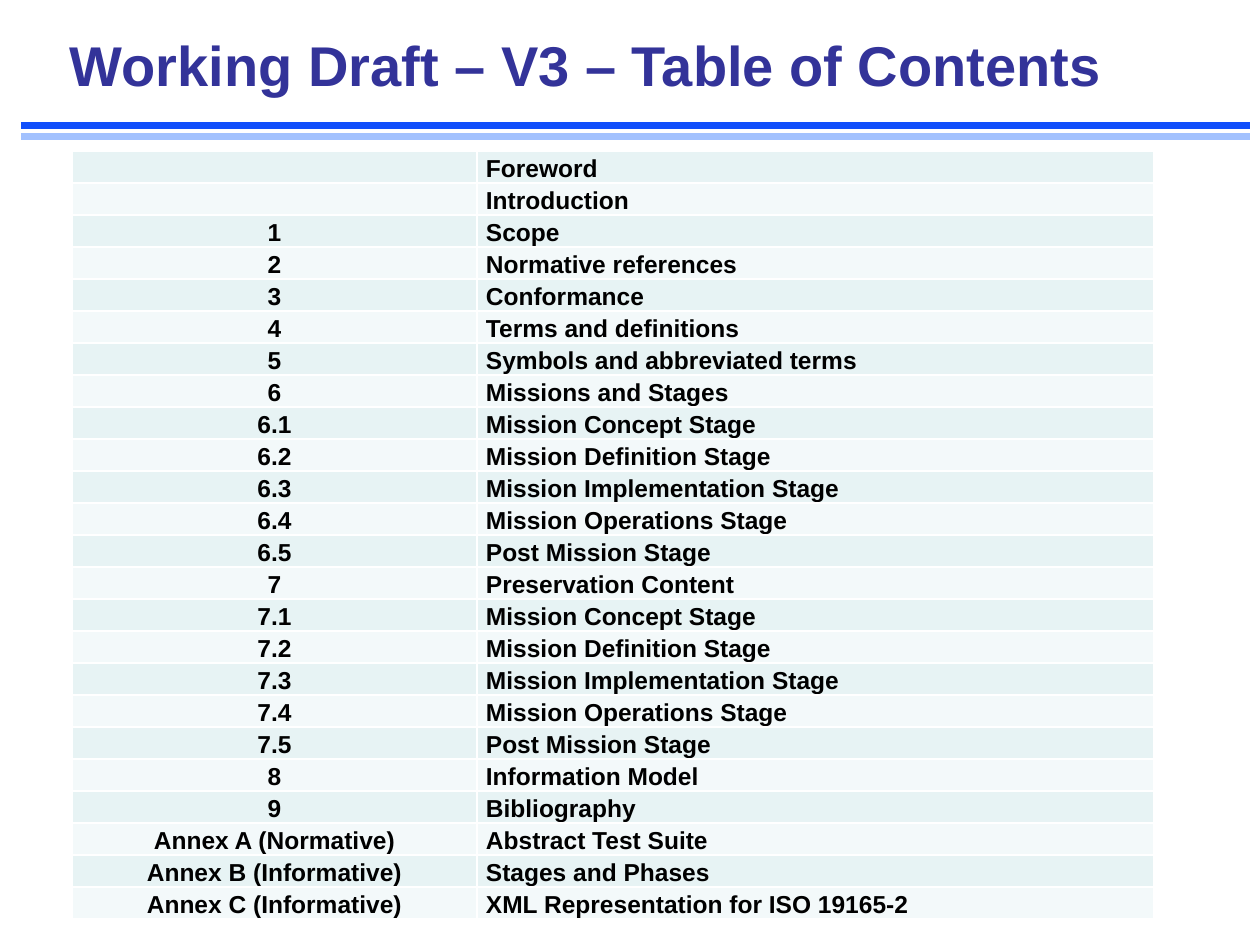
import dataclasses

import lxml.etree
import pptx
import pptx.dml.color
import pptx.enum.shapes
import pptx.enum.text
import pptx.oxml.ns
import pptx.util

EMU_PER_PX = 914400 // 126
ALIGN = pptx.enum.text.PP_ALIGN
MIDDLE = pptx.enum.text.MSO_ANCHOR.MIDDLE


@dataclasses.dataclass(frozen=True)
class Theme:
    font: str = "Arial"
    title_size: int = 32
    cell_size: int = 14
    rule_width: int = 4
    border_width: int = 1
    title: str = "333399"
    text: str = "000000"
    border: str = "FFFFFF"
    rules: tuple = ("114FFB", "A2C1FE")
    bands: tuple = ("E7F3F4", "F3F9FA")


THEME = Theme()

CONTENTS = [
    ("", "Foreword"),
    ("", "Introduction"),
    ("1", "Scope"),
    ("2", "Normative references"),
    ("3", "Conformance"),
    ("4", "Terms and definitions"),
    ("5", "Symbols and abbreviated terms"),
    ("6", "Missions and Stages"),
    ("6.1", "Mission Concept Stage"),
    ("6.2", "Mission Definition Stage"),
    ("6.3", "Mission Implementation Stage"),
    ("6.4", "Mission Operations Stage"),
    ("6.5", "Post Mission Stage"),
    ("7", "Preservation Content"),
    ("7.1", "Mission Concept Stage"),
    ("7.2", "Mission Definition Stage"),
    ("7.3", "Mission Implementation Stage"),
    ("7.4", "Mission Operations Stage"),
    ("7.5", "Post Mission Stage"),
    ("8", "Information Model"),
    ("9", "Bibliography"),
    ("Annex A (Normative)", "Abstract Test Suite"),
    ("Annex B (Informative)", "Stages and Phases"),
    ("Annex C (Informative)", "XML Representation for ISO 19165-2"),
]


def px(length):
    return pptx.util.Emu(length * EMU_PER_PX)


def rgb(color):
    return pptx.dml.color.RGBColor.from_string(color)


def add_element(parent, tag, **attributes):
    element = lxml.etree.SubElement(parent, pptx.oxml.ns.qn(tag))
    for name, value in attributes.items():
        element.set(name, str(value))
    return element


def write_text(frame, text, *, size, color, align, spacing):
    paragraph = frame.paragraphs[0]
    paragraph.alignment = align
    paragraph.line_spacing = spacing
    if not text:
        add_element(paragraph._p, "a:endParaRPr", sz=size * 100, b=1)
        return
    run = paragraph.add_run()
    run.text = text
    run.font.name = THEME.font
    run.font.size = pptx.util.Pt(size)
    run.font.bold = True
    run.font.color.rgb = rgb(color)


def add_title(slide, text):
    title = slide.shapes.title
    title.left, title.top, title.width, title.height = map(px, (19, 32, 1134, 74))
    frame = title.text_frame
    frame.word_wrap = True
    frame.auto_size = pptx.enum.text.MSO_AUTO_SIZE.NONE
    frame.vertical_anchor = MIDDLE
    write_text(frame, text, size=THEME.title_size, color=THEME.title,
               align=ALIGN.CENTER, spacing=0.85)


def add_rule(slide, left, right, y, color):
    rule = slide.shapes.add_connector(
        pptx.enum.shapes.MSO_CONNECTOR.STRAIGHT, px(left), px(y), px(right), px(y))
    rule.line.color.rgb = rgb(color)
    rule.line.width = pptx.util.Pt(THEME.rule_width)
    add_element(rule._element.spPr, "a:effectLst")


def set_borders(cell):
    properties = cell._tc.get_or_add_tcPr()
    for side in ("a:lnL", "a:lnR", "a:lnT", "a:lnB"):
        line = add_element(properties, side, w=pptx.util.Pt(THEME.border_width))
        fill = add_element(line, "a:solidFill")
        add_element(fill, "a:srgbClr", val=THEME.border)


def format_cell(cell, text, align, fill):
    set_borders(cell)
    cell.fill.solid()
    cell.fill.fore_color.rgb = rgb(fill)
    cell.margin_left = cell.margin_right = px(9)
    cell.margin_top = cell.margin_bottom = 0
    cell.vertical_anchor = MIDDLE
    write_text(cell.text_frame, text, size=THEME.cell_size, color=THEME.text,
               align=align, spacing=1.15)


def add_contents_table(slide, entries):
    widths = (405, 677)
    row_height = 32
    frame = slide.shapes.add_table(
        len(entries), len(widths), px(72), px(151),
        px(sum(widths)), px(row_height * len(entries)))
    table = frame.table
    table.first_row = False
    table.horz_banding = False
    for column, width in zip(table.columns, widths):
        column.width = px(width)
    for index, entry in enumerate(entries):
        table.rows[index].height = px(row_height)
        fill = THEME.bands[index % 2]
        for column, align in enumerate((ALIGN.CENTER, ALIGN.LEFT)):
            format_cell(table.cell(index, column), entry[column], align, fill)


def main():
    presentation = pptx.Presentation()
    presentation.slide_width = px(1260)
    presentation.slide_height = px(945)
    slide = presentation.slides.add_slide(presentation.slide_layouts[5])
    for y, color in zip((126, 137), THEME.rules):
        add_rule(slide, 21, 1250, y, color)
    add_title(slide, "Working Draft – V3 – Table of Contents")
    add_contents_table(slide, CONTENTS)
    presentation.save("out.pptx")


if __name__ == "__main__":
    main()
